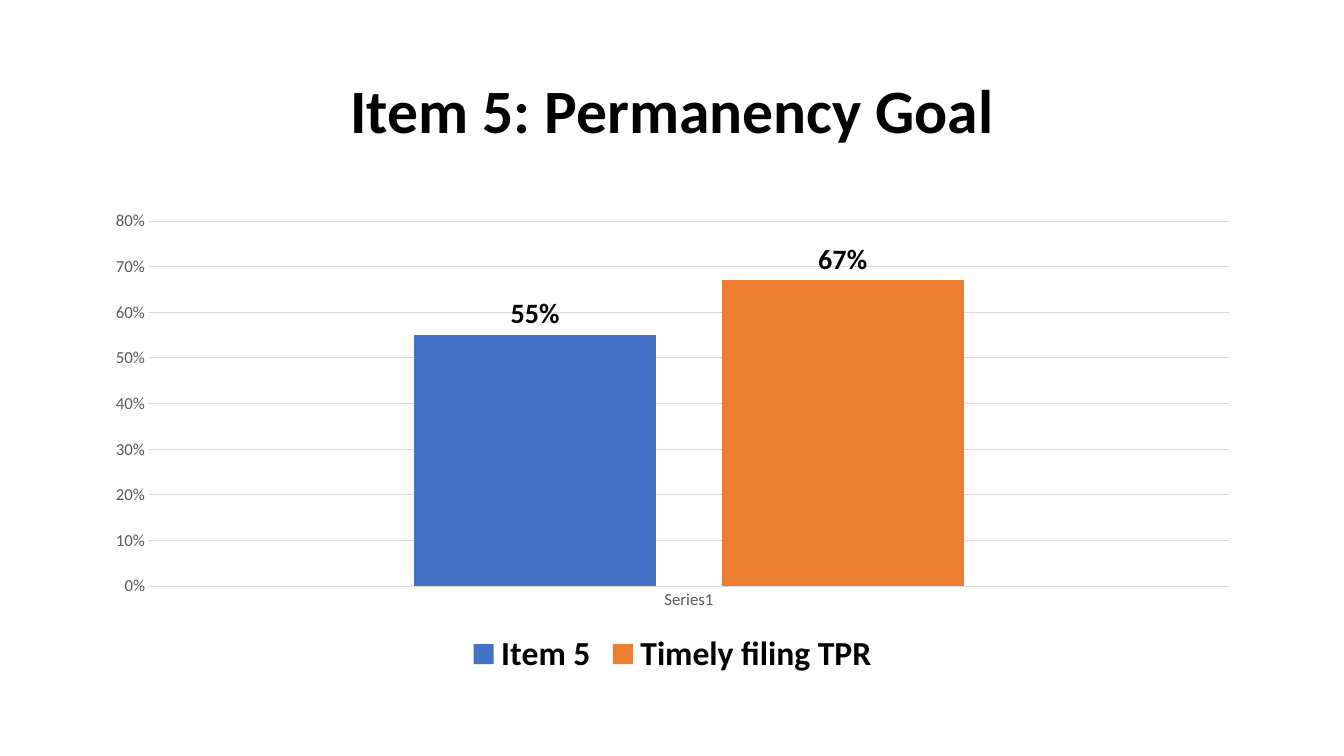
from pptx import Presentation
from pptx.chart.data import CategoryChartData
from pptx.dml.color import RGBColor
from pptx.enum.chart import XL_CHART_TYPE, XL_LABEL_POSITION, XL_LEGEND_POSITION, XL_TICK_MARK
from pptx.enum.text import MSO_ANCHOR, PP_ALIGN
from pptx.util import Inches, Pt

BLACK = RGBColor(0x00, 0x00, 0x00)
GRAY = RGBColor(0x59, 0x59, 0x59)
RULE = RGBColor(0xD9, 0xD9, 0xD9)
BLUE = RGBColor(0x44, 0x72, 0xC4)
ORANGE = RGBColor(0xED, 0x7D, 0x31)

GOALS = [("Item 5", 0.55, BLUE), ("Timely filing TPR", 0.67, ORANGE)]


class Deck:
    face = "Calibri"

    def __init__(self, wide, high):
        self.deck = Presentation()
        self.deck.slide_width = Inches(wide)
        self.deck.slide_height = Inches(high)
        self.slide = self.deck.slides.add_slide(self.deck.slide_layouts[5])

    def area(self, left, top, wide, high):
        across, down = self.deck.slide_width, self.deck.slide_height
        return int(left * across), int(top * down), int(wide * across), int(high * down)

    def style(self, font, size, color=BLACK, bold=False):
        font.name = self.face
        font.size = Pt(size)
        font.bold = bold
        font.color.rgb = color

    def rule(self, line):
        line.color.rgb = RULE
        line.width = Pt(0.75)

    def title(self, text, *share):
        head = self.slide.shapes.title
        head.left, head.top, head.width, head.height = self.area(*share)
        frame = head.text_frame
        frame.text = text
        frame.word_wrap = True
        frame.vertical_anchor = MSO_ANCHOR.MIDDLE
        para = frame.paragraphs[0]
        para.alignment = PP_ALIGN.CENTER
        para.line_spacing = 0.9
        self.style(para.font, 44, bold=True)

    def axis(self, axis):
        axis.major_tick_mark = axis.minor_tick_mark = XL_TICK_MARK.NONE
        self.style(axis.tick_labels.font, 12, GRAY)

    def bars(self, group, rows, *share):
        data = CategoryChartData(number_format="0%")
        data.categories = [group]
        for name, value, _ in rows:
            data.add_series(name, [value])
        kind = XL_CHART_TYPE.COLUMN_CLUSTERED
        chart = self.slide.shapes.add_chart(kind, *self.area(*share), data).chart
        self.style(chart.font, 10)
        chart.has_title = False

        self.axis(chart.category_axis)
        self.rule(chart.category_axis.format.line)
        scale = chart.value_axis
        self.axis(scale)
        scale.minimum_scale, scale.maximum_scale, scale.major_unit = 0, 0.8, 0.1
        scale.format.line.fill.background()
        self.rule(scale.major_gridlines.format.line)
        scale.tick_labels.number_format = "0%"
        scale.tick_labels.number_format_is_linked = False

        chart.has_legend = True
        chart.legend.position = XL_LEGEND_POSITION.BOTTOM
        chart.legend.include_in_layout = False
        self.style(chart.legend.font, 24, bold=True)

        plot = chart.plots[0]
        plot.gap_width, plot.overlap = 219, -27
        plot.vary_by_categories = False
        for series, (_, _, color) in zip(plot.series, rows):
            series.format.fill.solid()
            series.format.fill.fore_color.rgb = color
            labels = series.data_labels
            labels.show_value = True
            labels.position = XL_LABEL_POSITION.OUTSIDE_END
            self.style(labels.font, 20, bold=True)


def main():
    deck = Deck(13.33, 7.5)
    edge = 0.92 / 13.33
    span = 11.5 / 13.33
    deck.title("Item 5: Permanency Goal", edge, 0.4 / 7.5, span, 1.45 / 7.5)
    deck.bars("Series1", GOALS, edge, 2 / 7.5, span, 4.76 / 7.5)
    deck.deck.save("out.pptx")


if __name__ == "__main__":
    main()
